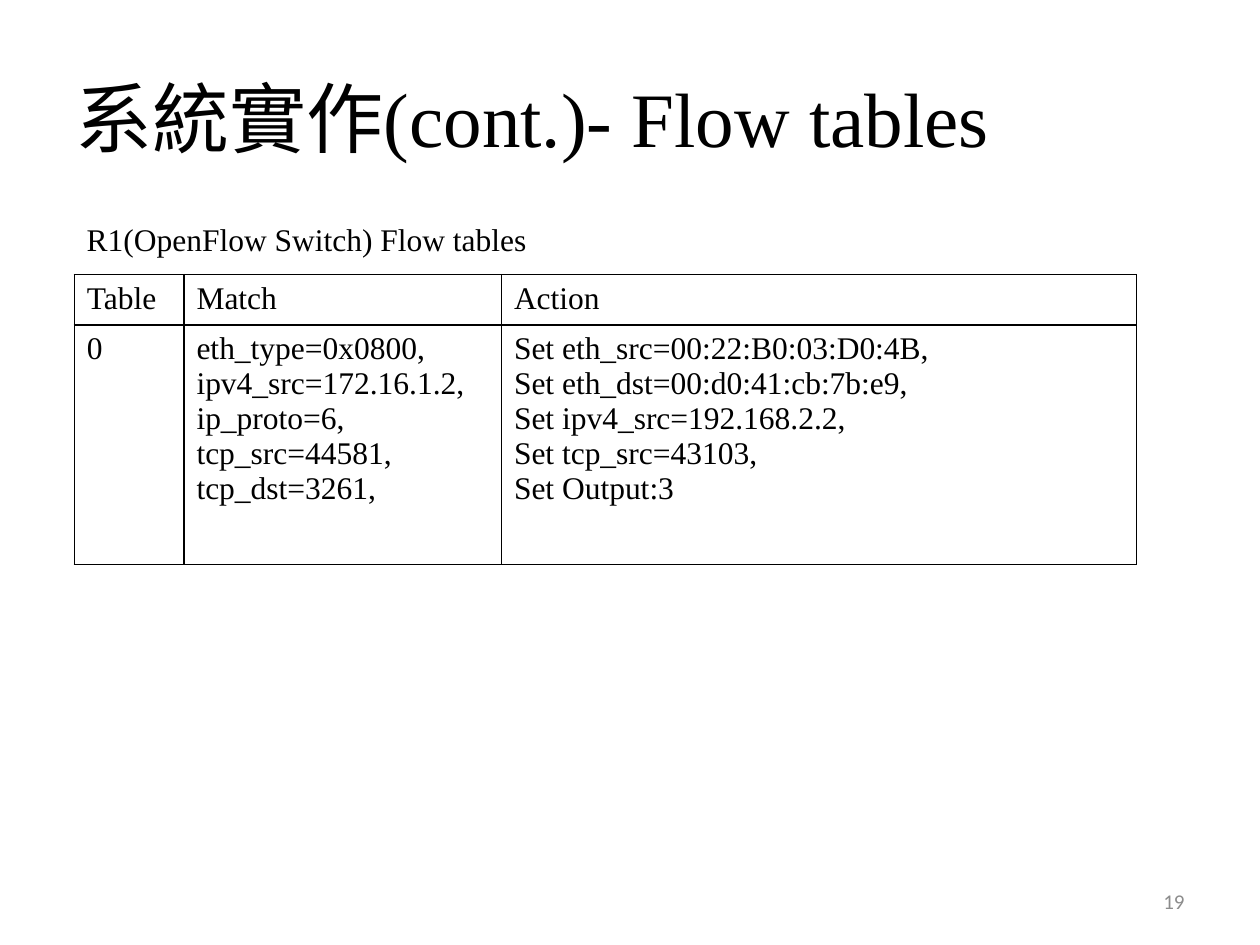
from lxml.etree import SubElement
from pptx import Presentation
from pptx.dml.color import RGBColor
from pptx.enum.text import MSO_ANCHOR as Anchor, MSO_AUTO_SIZE as AutoSize, PP_ALIGN as Align
from pptx.oxml.ns import qn
from pptx.util import Inches, Pt

WIDTH, HEIGHT = 10, 7.5
MARGIN = 0.05 * WIDTH
TABLE_LEFT = 0.59
SERIF = "Times New Roman"
BLACK = "000000"

COLUMN_WIDTHS = [0.87, 2.52, 5.04]
ROW_HEIGHTS = [0.4, 1.9]
FLOW_ROWS = [
    ["Table", "Match", "Action"],
    [
        "0",
        "eth_type=0x0800,\nipv4_src=172.16.1.2,\nip_proto=6,\ntcp_src=44581,\ntcp_dst=3261,",
        "Set eth_src=00:22:B0:03:D0:4B,\nSet eth_dst=00:d0:41:cb:7b:e9,\n"
        "Set ipv4_src=192.168.2.2,\nSet tcp_src=43103,\nSet Output:3",
    ],
]


def paint(color_format, value):
    color_format.rgb = RGBColor.from_string(value)


def write(frame, text, size=18, font=SERIF, color=BLACK, align=Align.LEFT,
          anchor=Anchor.TOP, wrap=True):
    frame.text = text
    frame.word_wrap = wrap
    frame.vertical_anchor = anchor
    for paragraph in frame.paragraphs:
        paragraph.alignment = align
        for run in paragraph.runs:
            run.font.size = Pt(size)
            run.font.name = font
            paint(run.font.color, color)


def add_title(slide, text):
    title = slide.shapes.title
    title.left, title.top = Inches(MARGIN), Inches(0.04 * HEIGHT)
    title.width, title.height = Inches(WIDTH - 2 * MARGIN), Inches(1.25)
    write(title.text_frame, text, size=44, anchor=Anchor.MIDDLE)


def add_label(slide, text, left, top, width, **style):
    label = slide.shapes.add_textbox(*map(Inches, (left, top, width, 0.4)))
    write(label.text_frame, text, **style)
    return label


def outline(cell, color=BLACK, width=1):
    properties = cell._tc.get_or_add_tcPr()
    for side in ("lnL", "lnR", "lnT", "lnB"):
        border = SubElement(properties, qn(f"a:{side}"), w=str(Pt(width)))
        fill = SubElement(border, qn("a:solidFill"))
        SubElement(fill, qn("a:srgbClr"), val=color)


def add_flow_table(slide, left, top):
    table = slide.shapes.add_table(
        len(ROW_HEIGHTS), len(COLUMN_WIDTHS), Inches(left), Inches(top),
        Inches(sum(COLUMN_WIDTHS)), Inches(sum(ROW_HEIGHTS))).table
    table.first_row = table.horz_banding = False
    for column, width in zip(table.columns, COLUMN_WIDTHS):
        column.width = Inches(width)
    for row, height, entries in zip(table.rows, ROW_HEIGHTS, FLOW_ROWS):
        row.height = Inches(height)
        for cell, entry in zip(row.cells, entries):
            write(cell.text_frame, entry)
            outline(cell)
            cell.fill.background()


def main():
    deck = Presentation()
    deck.slide_width, deck.slide_height = Inches(WIDTH), Inches(HEIGHT)
    slide = deck.slides.add_slide(deck.slide_layouts[5])
    add_title(slide, "系統實作(cont.)- Flow tables")
    page_width = 2.33
    add_label(slide, "19", WIDTH - MARGIN - page_width, 6.95, page_width,
              size=12, font="Calibri", color="8C8C8C",
              align=Align.RIGHT, anchor=Anchor.MIDDLE)
    caption = add_label(slide, "R1(OpenFlow Switch) Flow tables",
                        TABLE_LEFT, 1.7, 3.73, wrap=False)
    caption.text_frame.auto_size = AutoSize.SHAPE_TO_FIT_TEXT
    add_flow_table(slide, TABLE_LEFT, 2.18)
    deck.save("out.pptx")


if __name__ == "__main__":
    main()
